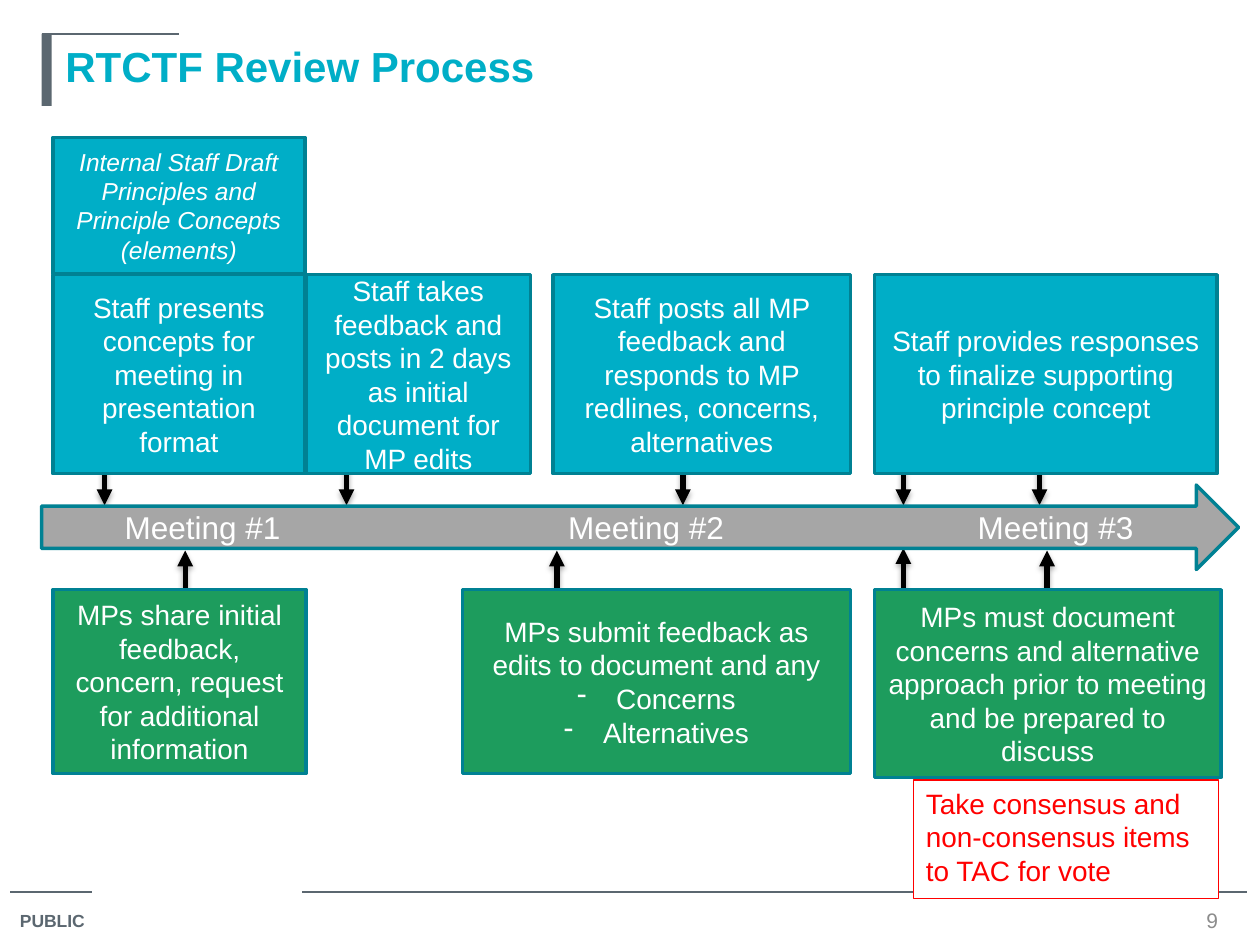
import pptx
import pptx.util
import pptx.oxml
import pptx.oxml.ns
import pptx.dml.color
import pptx.enum.shapes
import pptx.enum.text
from lxml import etree

Inches = pptx.util.Inches
Pt = pptx.util.Pt
Shape = pptx.enum.shapes.MSO_SHAPE
Align = pptx.enum.text.PP_ALIGN
Anchor = pptx.enum.text.MSO_ANCHOR
qn = pptx.oxml.ns.qn

COLORS = {
    "white": "FFFFFF", "black": "000000", "slate": "5B6770", "teal": "00AEC7",
    "teal_dark": "008193", "green": "1D9C5D", "gray": "A6A6A6",
    "number": "8C8C8C", "red": "FF0000",
}
ROW_TOP, ROW_HEIGHT = 2.18, 1.58
REPLY_TOP, REPLY_HEIGHT = 4.68, 1.46


def color(name):
    return pptx.dml.color.RGBColor.from_string(COLORS[name])


def write(shape, text, size=16, ink="white", bold=False, italic=False,
          align=Align.CENTER, anchor=Anchor.MIDDLE, wrap=True, dashes=(), tabs=()):
    """Write one paragraph per line; dashes lists the lines with a dash bullet."""
    frame = shape.text_frame
    frame.word_wrap = wrap
    frame.vertical_anchor = anchor
    for index, line in enumerate(text.split("\n")):
        para = frame.paragraphs[0] if index == 0 else frame.add_paragraph()
        para.alignment = align
        props = para._p.get_or_add_pPr()
        if index in dashes:
            props.set("marL", str(Inches(0.31)))
            props.set("indent", str(-Inches(0.31)))
            etree.SubElement(props, qn("a:buChar"), char="-")
        if tabs:
            stops = etree.SubElement(props, qn("a:tabLst"))
            for stop in tabs:
                etree.SubElement(stops, qn("a:tab"), pos=str(Inches(stop)), algn="ctr")
        span = para.add_run()
        span.text = line
        span.font.name = "Arial"
        span.font.size = Pt(size)
        span.font.bold = bold
        span.font.italic = italic
        span.font.color.rgb = color(ink)


def add_label(page, box, text, **style):
    write(page.shapes.add_textbox(*map(Inches, box)), text, **style)


def add_block(page, box, fill, text="", line="teal_dark", width=2,
              kind=Shape.RECTANGLE, **style):
    shape = page.shapes.add_shape(kind, *map(Inches, box))
    shape.shadow.inherit = False
    shape.fill.solid()
    shape.fill.fore_color.rgb = color(fill)
    if line:
        shape.line.color.rgb = color(line)
        shape.line.width = Pt(width)
    else:
        shape.line.fill.background()
    if text:
        write(shape, text, **style)


def add_line(page, start, end, ink="slate", width=0.75):
    line = page.shapes.add_connector(
        pptx.enum.shapes.MSO_CONNECTOR.STRAIGHT, *map(Inches, start + end))
    line.line.color.rgb = color(ink)
    line.line.width = Pt(width)
    effects = etree.SubElement(line._element.spPr, qn("a:effectLst"))
    return line, effects


def add_arrow(page, x, start, end):
    """Draw a vertical black arrow with a soft shadow."""
    arrow, effects = add_line(page, (x, start), (x, end), "black", 3)
    etree.SubElement(arrow.line._get_or_add_ln(), qn("a:tailEnd"), type="triangle")
    shadow = etree.SubElement(
        effects, qn("a:outerShdw"), blurRad=str(Pt(3.1)), dist=str(Pt(1.8)),
        dir="5400000", rotWithShape="0")
    tint = etree.SubElement(shadow, qn("a:srgbClr"), val=COLORS["black"])
    etree.SubElement(tint, qn("a:alpha"), val="35000")


def add_header(page, box):
    left, top, width, height = box
    add_block(page, (left, top, 0.08, height), "slate", line=None)
    add_line(page, (left, top), (left + 1.09, top))
    add_label(page, (left + 0.09, top, width - 0.09, height), "RTCTF Review Process",
              size=24, ink="teal", bold=True, align=Align.LEFT, anchor=Anchor.TOP)


def add_footer(page, box):
    left, top, width, height = box
    right = left + width
    add_line(page, (left, top), (left + 0.65, top))
    add_line(page, (left + 2.32, top), (right, top))
    add_label(page, (left - 0.02, top + 0.09, 0.77, 0.28), "PUBLIC", size=10,
              ink="slate", bold=True, align=Align.LEFT, anchor=Anchor.TOP, wrap=False)
    add_label(page, (right - 0.57, top + 0.1, 0.58, 0.24), "9", size=12, ink="number")


def add_arrows(page):
    for x in (0.83, 2.75, 5.42, 7.17, 8.25):
        add_arrow(page, x, 3.39, 4.01)
    for x, tip in ((1.47, 4.37), (4.42, 4.37), (7.17, 4.35), (8.31, 4.37)):
        add_arrow(page, x, tip + 0.5, tip)


def add_operator_steps(page, top, height):
    add_block(page, (0.42, top - 1.09, 2, 1.08), "teal",
              "Internal Staff Draft Principles and Principle Concepts (elements)",
              size=14, italic=True)
    for left, width, text in (
        (0.42, 2, "Staff presents concepts for meeting in presentation format"),
        (2.43, 1.78, "Staff takes feedback and posts in 2 days as initial "
                     "document for MP edits"),
        (4.39, 2.36, "Staff posts all MP feedback and responds to MP redlines, "
                     "concerns, alternatives"),
        (6.94, 2.72, "Staff provides responses to finalize supporting "
                     "principle concept"),
    ):
        add_block(page, (left, top, width, height), "teal", text)


def add_participant_steps(page, top, height):
    add_block(page, (0.42, top, 2.01, height), "green",
              "MPs share initial feedback, concern, request for additional information")
    add_block(page, (3.67, top, 3.08, height), "green",
              "MPs submit feedback as edits to document and any\nConcerns\nAlternatives",
              dashes=(1, 2))
    add_block(page, (6.94, top, 2.75, height + 0.03), "green",
              "MPs must document concerns and alternative approach prior to meeting "
              "and be prepared to discuss")
    add_block(page, (7.25, top + 1.51, 2.42, 0.94), "white",
              "Take consensus and non-consensus items to TAC for vote",
              line="red", width=0.75, ink="red", align=Align.LEFT, anchor=Anchor.TOP)


def add_timeline(page, box):
    add_block(page, box, "gray", "\tMeeting #1\tMeeting #2\tMeeting #3",
              kind=Shape.RIGHT_ARROW, size=18, align=Align.LEFT, tabs=(1.18, 4.7, 7.95))


def main():
    deck = pptx.Presentation()
    deck.slide_width, deck.slide_height = Inches(10), Inches(7.5)
    page = deck.slides.add_slide(deck.slide_layouts[6])
    add_footer(page, (0.08, 7.08, 9.82, 0.4))
    add_header(page, (0.33, 0.27, 9.34, 0.57))
    add_arrows(page)
    add_operator_steps(page, ROW_TOP, ROW_HEIGHT)
    add_participant_steps(page, REPLY_TOP, REPLY_HEIGHT)
    add_timeline(page, (0.33, 3.85, 9.5, 0.67))
    deck.save("out.pptx")


if __name__ == "__main__":
    main()
